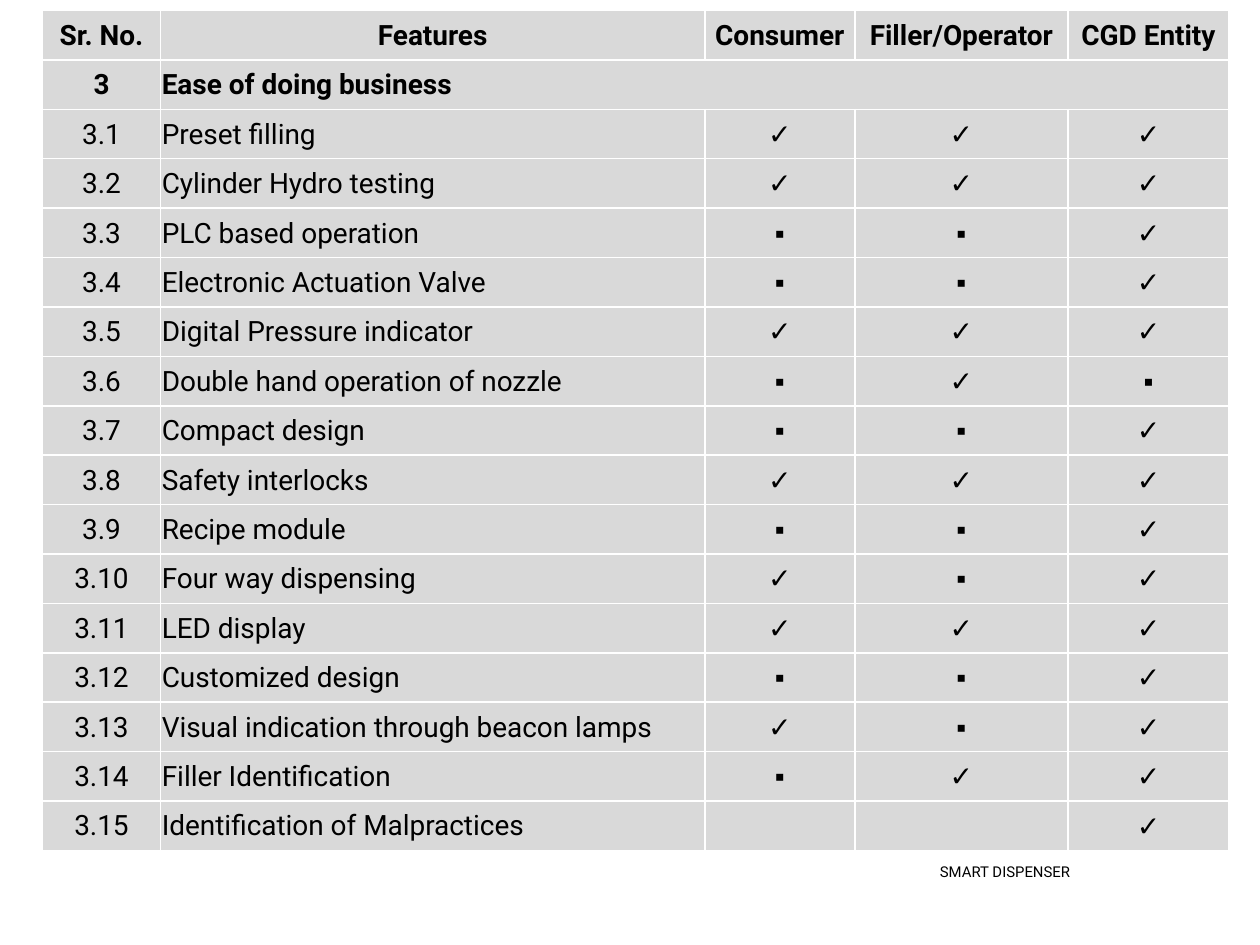
from dataclasses import dataclass

from lxml import etree
from pptx import Presentation
from pptx.dml.color import RGBColor
from pptx.enum.shapes import MSO_CONNECTOR
from pptx.enum.text import MSO_ANCHOR, PP_ALIGN
from pptx.oxml import parse_xml
from pptx.oxml.ns import nsdecls, qn
from pptx.util import Pt

CENTER, LEFT = PP_ALIGN.CENTER, PP_ALIGN.LEFT
MIDDLE = MSO_ANCHOR.MIDDLE
STRAIGHT = MSO_CONNECTOR.STRAIGHT


@dataclass(frozen=True)
class Theme:
    ink: str = "000000"
    cell_fill: str = "D9D9D9"
    border: str = "FFFFFF"
    text_font: str = "Roboto"
    mark_font: str = "Arial"
    table_size: float = 16
    footer_size: float = 8.5
    border_width: float = 1
    rule_width: float = 0.25
    cell_inset: float = 0.7


COLUMN_WIDTHS = [67.6, 311, 85.7, 121.8, 92.1]
ROW_HEIGHT = 28.24
HEADINGS = ["Sr. No.", "Features", "Consumer", "Filler/Operator", "CGD Entity"]
SECTION_NUMBER, SECTION = "3", "Ease of doing business"
# One mark each for consumer, filler/operator and CGD entity
FEATURES = [
    ("Preset filling", "✓✓✓"),
    ("Cylinder Hydro testing", "✓✓✓"),
    ("PLC based operation", "▪▪✓"),
    ("Electronic Actuation Valve", "▪▪✓"),
    ("Digital Pressure indicator", "✓✓✓"),
    ("Double hand operation of nozzle", "▪✓▪"),
    ("Compact design", "▪▪✓"),
    ("Safety interlocks", "✓✓✓"),
    ("Recipe module", "▪▪✓"),
    ("Four way dispensing", "✓▪✓"),
    ("LED display", "✓✓✓"),
    ("Customized design", "▪▪✓"),
    ("Visual indication through beacon lamps", "✓▪✓"),
    ("Filler Identification", "▪✓✓"),
    ("Identification of Malpractices", "  ✓"),
]


class SlideBuilder:
    def __init__(self, slide, theme):
        self.slide = slide
        self.theme = theme

    def add_run(self, paragraph, text, size, font=None, bold=False):
        run = paragraph.add_run()
        run.text = text
        run.font.name = font or self.theme.text_font
        run.font.size = Pt(size)
        run.font.bold = bold
        run.font.color.rgb = RGBColor.from_string(self.theme.ink)

    def rule(self, left, right, y):
        line = self.slide.shapes.add_connector(
            STRAIGHT, Pt(left), Pt(y), Pt(right), Pt(y))
        line.line.width = Pt(self.theme.rule_width)
        line.line.color.rgb = RGBColor.from_string(self.theme.ink)
        etree.SubElement(line._element.spPr, qn("a:effectLst"))

    def label(self, text, left, top, width, height):
        box = self.slide.shapes.add_textbox(
            Pt(left), Pt(top), Pt(width), Pt(height))
        frame = box.text_frame
        frame.word_wrap = True
        frame.margin_left = frame.margin_right = 0
        frame.margin_top = frame.margin_bottom = 0
        self.add_run(frame.paragraphs[0], text, self.theme.footer_size)

    def table(self, left, top, widths, row_height, row_count):
        """Add an unbanded table whose cells all have the theme's fill and borders."""
        table = self.slide.shapes.add_table(
            row_count, len(widths), Pt(left), Pt(top),
            Pt(sum(widths)), Pt(row_height * row_count)).table
        table.first_row = table.horz_banding = False
        for column, width in zip(table.columns, widths):
            column.width = Pt(width)
        for row in table.rows:
            row.height = Pt(row_height)
            for cell in row.cells:
                self.style_cell(cell)
        return table

    def style_cell(self, cell):
        inset = Pt(self.theme.cell_inset)
        cell.margin_left = cell.margin_right = cell.margin_top = inset
        cell.margin_bottom = 0
        cell.vertical_anchor = MIDDLE
        cell.fill.solid()
        cell.fill.fore_color.rgb = RGBColor.from_string(self.theme.cell_fill)
        properties = cell._tc.get_or_add_tcPr()
        for position, side in enumerate(("lnL", "lnR", "lnT", "lnB")):
            properties.insert(position, parse_xml(
                f'<a:{side} {nsdecls("a")} w="{Pt(self.theme.border_width)}">'
                f'<a:solidFill><a:srgbClr val="{self.theme.border}"/></a:solidFill>'
                f'</a:{side}>'))

    def cell_text(self, cell, text, align=CENTER, font=None, bold=False):
        paragraph = cell.text_frame.paragraphs[0]
        paragraph.alignment = align
        self.add_run(paragraph, text, self.theme.table_size, font, bold)


def main():
    presentation = Presentation()
    presentation.slide_width, presentation.slide_height = Pt(720), Pt(540)
    blank_layout = presentation.slide_layouts[6]
    theme = Theme()
    builder = SlideBuilder(presentation.slides.add_slide(blank_layout), theme)

    builder.rule(27, 693, 486)
    table = builder.table(24.2, 6, COLUMN_WIDTHS, ROW_HEIGHT, len(FEATURES) + 2)

    for column, heading in enumerate(HEADINGS):
        builder.cell_text(table.cell(0, column), heading, bold=True)

    builder.cell_text(table.cell(1, 0), SECTION_NUMBER, bold=True)
    section_cell = table.cell(1, 1)
    section_cell.merge(table.cell(1, len(HEADINGS) - 1))
    builder.cell_text(section_cell, SECTION, LEFT, bold=True)

    for number, (feature, marks) in enumerate(FEATURES, start=1):
        row = number + 1
        builder.cell_text(table.cell(row, 0), f"{SECTION_NUMBER}.{number}")
        builder.cell_text(table.cell(row, 1), feature, LEFT)
        for column, mark in enumerate(marks, start=2):
            if mark != " ":
                builder.cell_text(table.cell(row, column), mark, font=theme.mark_font)

    builder.label("SMART DISPENSER", 537.1, 493.2, 131.8, 10.1)
    presentation.save("out.pptx")


if __name__ == "__main__":
    main()
